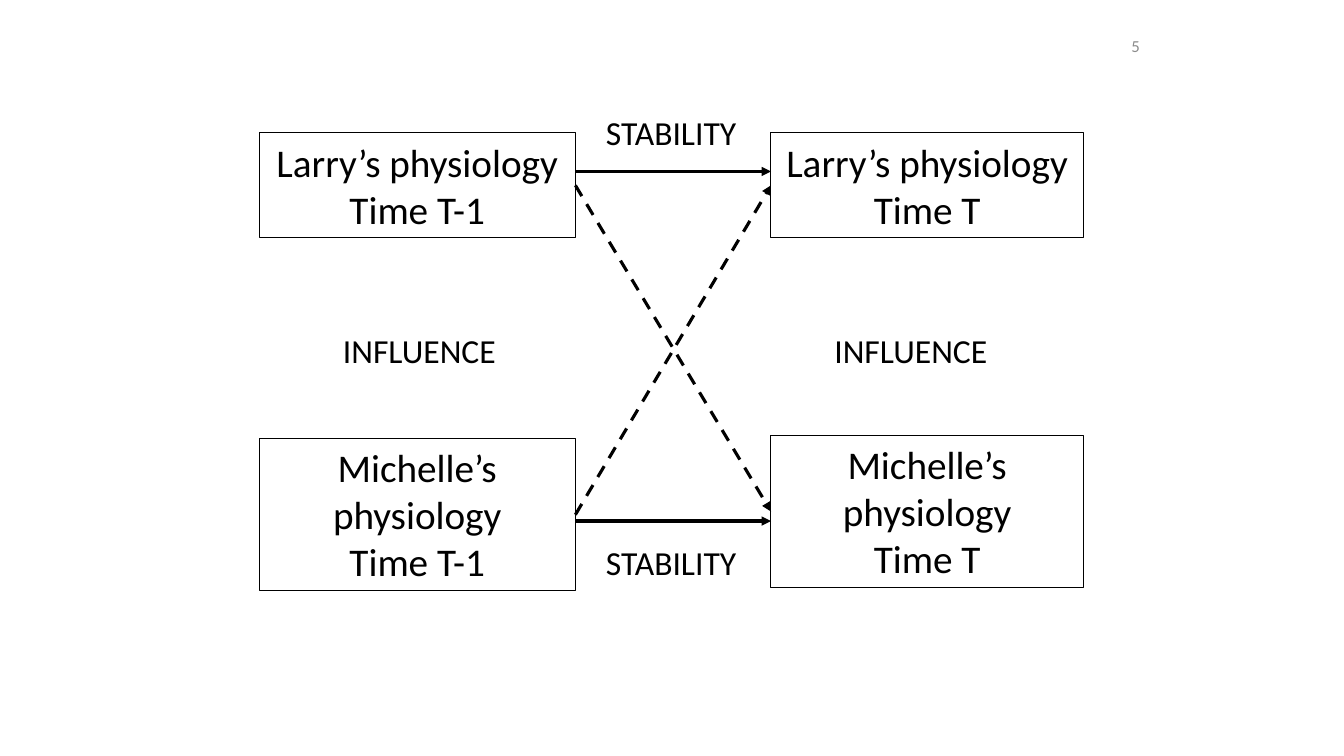
from lxml import etree
from pptx import Presentation
from pptx.dml.color import RGBColor
from pptx.enum.dml import MSO_LINE
from pptx.enum.shapes import MSO_CONNECTOR, MSO_SHAPE
from pptx.enum.text import MSO_ANCHOR, MSO_AUTO_SIZE, PP_ALIGN
from pptx.oxml.ns import qn
from pptx.util import Cm, Pt

BLACK = RGBColor(0, 0, 0)
GREY = RGBColor(0x8C, 0x8C, 0x8C)
FONT = "Calibri"
LEFT, RIGHT = 2, 3  # indexes into a box's left, top, width, height run on below

# name: (lines, left, top, width, height), in cm
BOXES = {
    "larry before": (["Larry’s physiology", "Time T-1"], 6.53, 3.35, 7.97, 2.64),
    "michelle before": (["Michelle’s physiology", "Time T-1"], 6.53, 11.05, 7.97, 3.84),
    "larry now": (["Larry’s physiology", "Time T"], 19.43, 3.35, 7.87, 2.64),
    "michelle now": (["Michelle’s physiology", "Time T"], 19.43, 10.97, 7.87, 3.84),
}
INFLUENCES = [("larry before", "michelle now"), ("michelle before", "larry now")]
STABILITY_Y = [4.32, 13.13]
# text, left, top, width
LABELS = [
    ("STABILITY", 15.01, 2.69, 3.81),
    ("STABILITY", 15.01, 13.54, 3.81),
    ("INFLUENCE", 8.31, 8.18, 4.52),
    ("INFLUENCE", 20.62, 8.18, 4.67),
]
PAGE_NUMBER = "5"


def write(sp, lines, size, color=BLACK, align=PP_ALIGN.CENTER,
          anchor=MSO_ANCHOR.TOP, wrap=True):
    tf = sp.text_frame
    tf.word_wrap = wrap
    tf.auto_size = MSO_AUTO_SIZE.NONE
    tf.vertical_anchor = anchor
    tf.text = "\n".join(lines)
    for p in tf.paragraphs:
        p.alignment = align
        p.font.name = FONT
        p.font.size = Pt(size)
        p.font.color.rgb = color


def add_box(slide, lines, *place):
    sp = slide.shapes.add_shape(MSO_SHAPE.RECTANGLE, *map(Cm, place))
    sp.shadow.inherit = False
    sp.fill.background()
    sp.line.color.rgb = BLACK
    sp.line.width = Pt(0.75)
    write(sp, lines, 28)
    return sp


def add_arrow(slide, x1, y1, x2, y2):
    arrow = slide.shapes.add_connector(MSO_CONNECTOR.STRAIGHT, x1, y1, x2, y2)
    arrow.line.color.rgb = BLACK
    arrow.line.width = Pt(2.25)
    etree.SubElement(arrow.line._get_or_add_ln(), qn("a:tailEnd"), type="triangle")
    etree.SubElement(arrow._element.spPr, qn("a:effectLst"))
    return arrow


def main():
    prs = Presentation()
    prs.slide_width, prs.slide_height = Cm(33.87), Cm(19.05)
    slide = prs.slides.add_slide(prs.slide_layouts[6])

    boxes = {name: add_box(slide, *box) for name, box in BOXES.items()}
    start = boxes["larry before"].left + boxes["larry before"].width
    end = boxes["larry now"].left

    for y in STABILITY_Y:
        add_arrow(slide, start, Cm(y), end, Cm(y))
    for source, target in INFLUENCES:
        arrow = add_arrow(slide, start, 0, end, 0)
        arrow.line.dash_style = MSO_LINE.DASH
        arrow.begin_connect(boxes[source], 3)
        arrow.end_connect(boxes[target], 1)

    for text, left, top, width in LABELS:
        label = slide.shapes.add_textbox(Cm(left), Cm(top), Cm(width), Cm(1.27))
        write(label, [text], 24, wrap=False)

    number = slide.shapes.add_textbox(Cm(23.06), Cm(0.64), Cm(5.92), Cm(1.02))
    write(number, [PAGE_NUMBER], 12, GREY, PP_ALIGN.RIGHT, MSO_ANCHOR.MIDDLE)

    prs.save("out.pptx")


if __name__ == "__main__":
    main()
